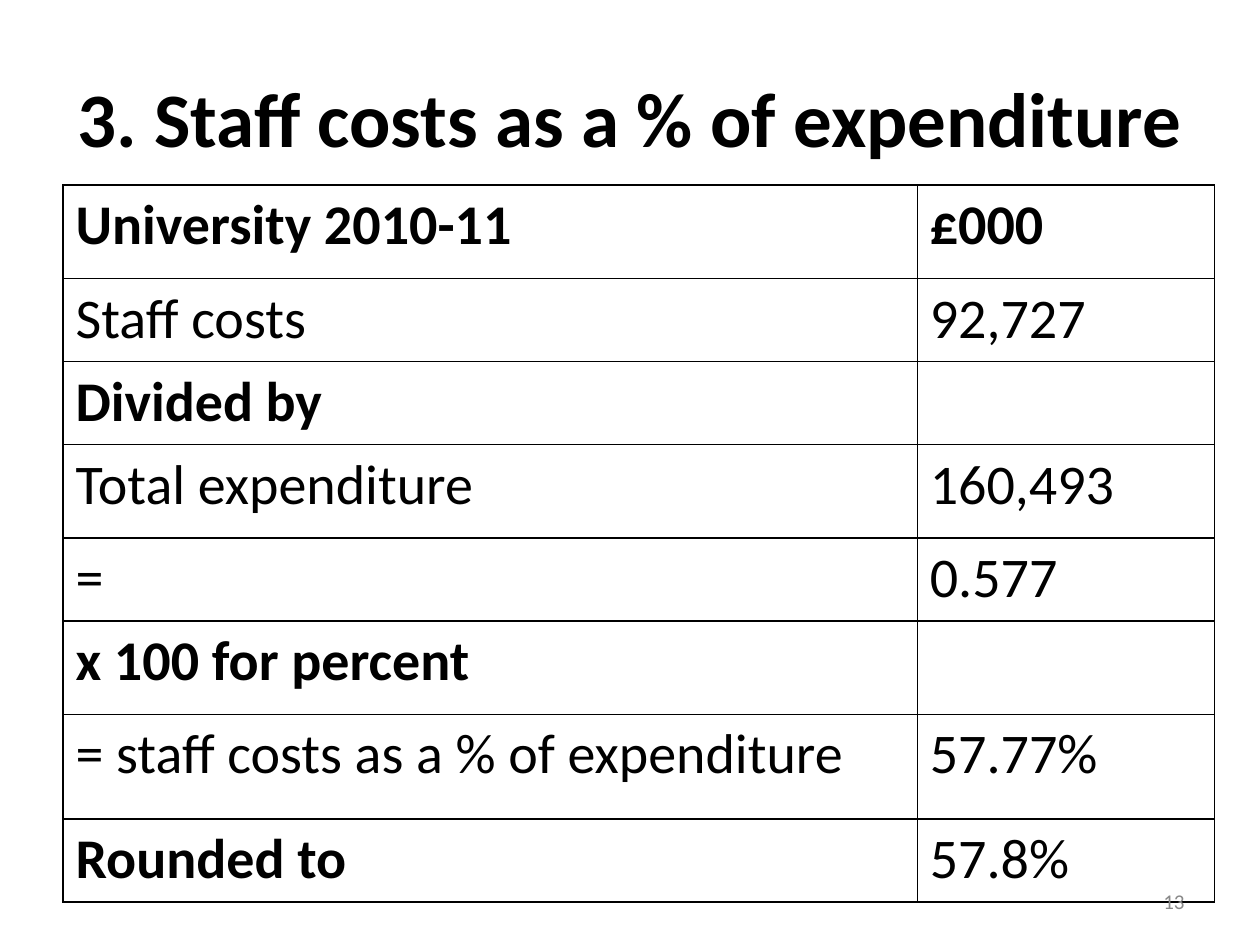
from dataclasses import dataclass

import pptx
import pptx.dml.color
import pptx.enum.text
import pptx.oxml.ns
import pptx.util
from lxml import etree

Inches = pptx.util.Inches
Pt = pptx.util.Pt
Align = pptx.enum.text.PP_ALIGN
Anchor = pptx.enum.text.MSO_ANCHOR
qn = pptx.oxml.ns.qn

FONT = "Calibri"
BLACK = "000000"
WHITE = "FFFFFF"
GREY = "898989"


@dataclass
class Row:
    label: str
    value: str
    height: float = 0.66
    label_bold: bool = False
    value_bold: bool = False


ROWS = [
    Row("University 2010-11", "£000", 0.74, True, True),
    Row("Staff costs", "92,727"),
    Row("Divided by", "", label_bold=True),
    Row("Total expenditure", "160,493", 0.74),
    Row("=", "0.577"),
    Row("x 100 for percent", "", 0.74, True),
    Row("= staff costs as a % of expenditure", "57.77%", 0.83),
    Row("Rounded to", "57.8%", label_bold=True),
]
COLUMN_WIDTHS = [6.78, 2.36]


def rgb(color: str) -> pptx.dml.color.RGBColor:
    return pptx.dml.color.RGBColor.from_string(color)


def style(p, size: float, color: str, bold: bool = False) -> None:
    p.font.name = FONT
    p.font.size = Pt(size)
    p.font.bold = bold
    p.font.color.rgb = rgb(color)


def add_text(slide, text: str, left: float, top: float, width: float, height: float,
             size: float, color: str, align: Align, bold: bool = False) -> None:
    sp = slide.shapes.add_textbox(Inches(left), Inches(top), Inches(width), Inches(height))
    tf = sp.text_frame
    tf.word_wrap = True
    tf.vertical_anchor = Anchor.MIDDLE
    p = tf.paragraphs[0]
    p.text = text
    p.alignment = align
    style(p, size, color, bold)


def add_borders(cell, color: str, width: float) -> None:
    tc_pr = cell._tc.get_or_add_tcPr()
    for side in ("a:lnL", "a:lnR", "a:lnT", "a:lnB"):
        ln = etree.SubElement(tc_pr, qn(side), w=str(Pt(width)))
        fill = etree.SubElement(ln, qn("a:solidFill"))
        etree.SubElement(fill, qn("a:srgbClr"), val=color)


def fill_cell(cell, text: str, bold: bool) -> None:
    add_borders(cell, BLACK, 1)
    cell.fill.solid()
    cell.fill.fore_color.rgb = rgb(WHITE)
    p = cell.text_frame.paragraphs[0]
    p.text = text
    style(p, 32, BLACK, bold)


def add_cost_table(slide, rows: list[Row], left: float, top: float) -> None:
    width = sum(COLUMN_WIDTHS)
    height = sum(row.height for row in rows)
    table = slide.shapes.add_table(len(rows), len(COLUMN_WIDTHS), Inches(left), Inches(top),
                                   Inches(width), Inches(height)).table
    for column, column_width in zip(table.columns, COLUMN_WIDTHS):
        column.width = Inches(column_width)
    for i, row in enumerate(rows):
        table.rows[i].height = Inches(row.height)
        fill_cell(table.cell(i, 0), row.label, row.label_bold)
        fill_cell(table.cell(i, 1), row.value, row.value_bold)


def main() -> None:
    prs = pptx.Presentation()
    prs.slide_width = Inches(10)
    prs.slide_height = Inches(7.5)
    slide = prs.slides.add_slide(prs.slide_layouts[6])
    add_text(slide, "3. Staff costs as a % of expenditure", 0.5, 0.3, 9, 1.25,
             44, BLACK, Align.CENTER, True)
    add_cost_table(slide, ROWS, 0.5, 1.47)
    add_text(slide, "13", 7.17, 6.95, 2.33, 0.4, 12, GREY, Align.RIGHT)
    prs.save("out.pptx")


if __name__ == "__main__":
    main()
